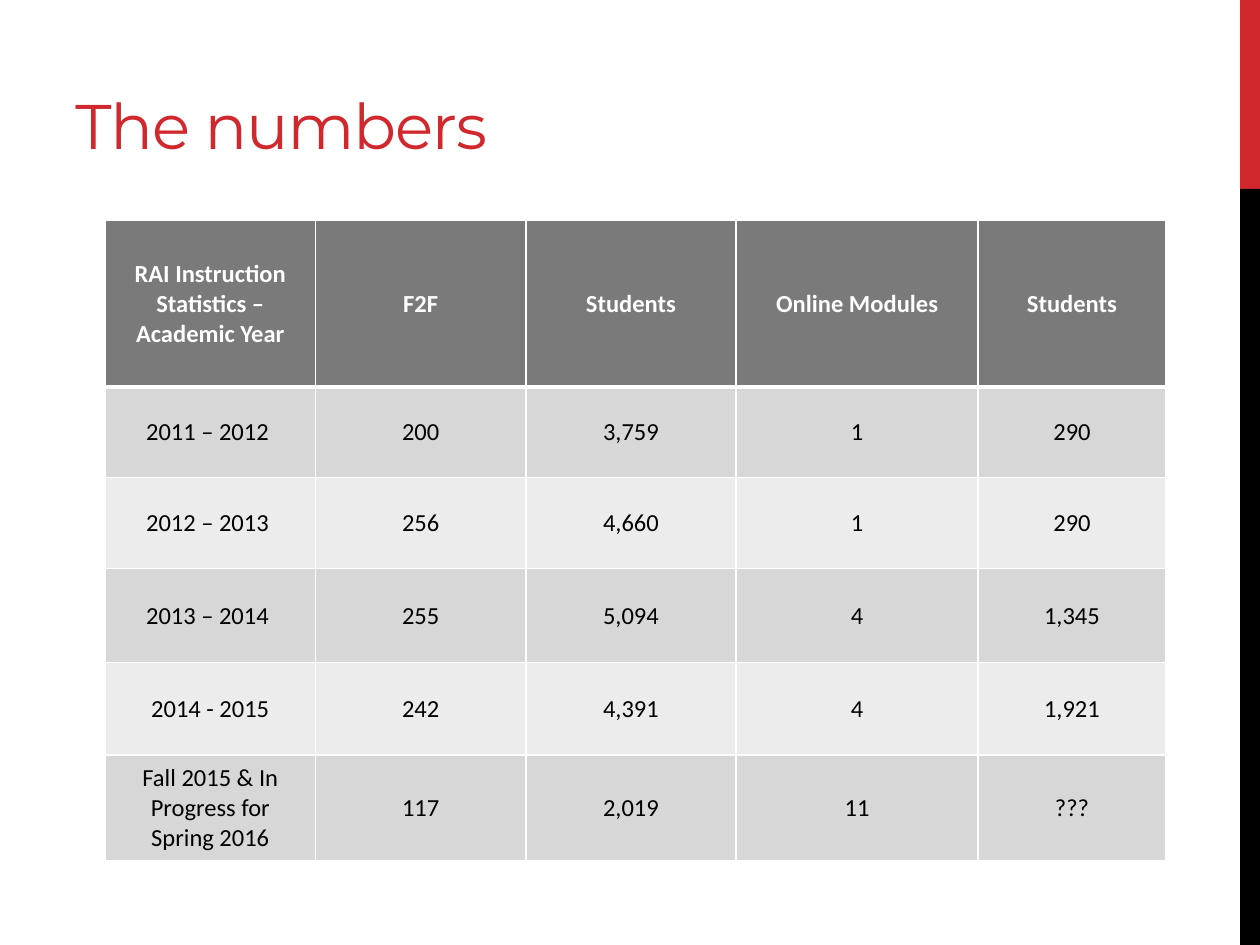
from dataclasses import dataclass

from lxml import etree
from pptx import Presentation
from pptx.dml.color import RGBColor
from pptx.enum.shapes import MSO_SHAPE
from pptx.enum.text import MSO_ANCHOR, PP_ALIGN
from pptx.oxml.ns import qn
from pptx.util import Cm, Pt

RECTANGLE = MSO_SHAPE.RECTANGLE
MIDDLE, BOTTOM = MSO_ANCHOR.MIDDLE, MSO_ANCHOR.BOTTOM
LEFT, CENTER = PP_ALIGN.LEFT, PP_ALIGN.CENTER


@dataclass(frozen=True)
class Theme:
    accent: str = "D1282E"
    black: str = "000000"
    white: str = "FFFFFF"
    header: str = "7A7A7A"
    bands: tuple = ("D7D7D7", "ECECEC")
    title_font: str = "Montserrat"
    body_font: str = "Calibri"
    title_size: float = 36
    body_size: float = 14
    title_spacing: float = -0.6
    border: float = 1
    header_border: float = 3


class SlideBuilder:
    def __init__(self, slide, theme):
        self.slide = slide
        self.theme = theme

    def bar(self, left, top, width, height, color):
        shape = self.slide.shapes.add_shape(
            RECTANGLE, Cm(left), Cm(top), Cm(width), Cm(height))
        shape.shadow.inherit = False
        shape.fill.solid()
        shape.fill.fore_color.rgb = RGBColor.from_string(color)
        shape.line.fill.background()

    def add_text(self, frame, text, font, size, color, bold=False, align=LEFT):
        paragraph = frame.paragraphs[0]
        paragraph.alignment = align
        run = paragraph.add_run()
        run.text = text
        run.font.name = font
        run.font.size = Pt(size)
        run.font.bold = bold
        run.font.color.rgb = RGBColor.from_string(color)
        return run

    def title(self, left, top, width, height, text):
        theme = self.theme
        box = self.slide.shapes.add_textbox(
            Cm(left), Cm(top), Cm(width), Cm(height))
        frame = box.text_frame
        frame.word_wrap = True
        frame.vertical_anchor = BOTTOM
        run = self.add_text(frame, text, theme.title_font, theme.title_size,
                            theme.accent)
        properties = run._r.get_or_add_rPr()
        properties.set("spc", str(round(theme.title_spacing * 100)))

    def borders(self, cell, top_width, bottom_width):
        """Outline a cell; call before filling, as the schema puts lines first."""
        properties = cell._tc.get_or_add_tcPr()
        side_width = self.theme.border
        widths = {"a:lnL": side_width, "a:lnR": side_width,
                  "a:lnT": top_width, "a:lnB": bottom_width}
        for tag, width in widths.items():
            line = etree.SubElement(properties, qn(tag), w=str(Pt(width)))
            fill = etree.SubElement(line, qn("a:solidFill"))
            etree.SubElement(fill, qn("a:srgbClr"), val=self.theme.white)

    def cell(self, cell, text, row_index):
        theme = self.theme
        is_header = row_index == 0
        fill = theme.header if is_header else theme.bands[(row_index - 1) % 2]
        color = theme.white if is_header else theme.black
        top_width = theme.header_border if row_index == 1 else theme.border
        bottom_width = theme.header_border if is_header else theme.border
        self.borders(cell, top_width, bottom_width)
        cell.fill.solid()
        cell.fill.fore_color.rgb = RGBColor.from_string(fill)
        cell.vertical_anchor = MIDDLE
        self.add_text(cell.text_frame, text, theme.body_font, theme.body_size,
                      color, is_header, CENTER)

    def table(self, left, top, column_widths, row_heights, rows):
        table = self.slide.shapes.add_table(
            len(rows), len(column_widths), Cm(left), Cm(top),
            Cm(sum(column_widths)), Cm(sum(row_heights))).table
        for column, width in zip(table.columns, column_widths):
            column.width = Cm(width)
        for index, (row, height) in enumerate(zip(table.rows, row_heights)):
            row.height = Cm(height)
            for cell, text in zip(row.cells, rows[index]):
                self.cell(cell, text, index)


STATISTICS = [
    ("RAI Instruction Statistics – Academic Year", "F2F", "Students",
     "Online Modules", "Students"),
    ("2011 – 2012 ", "200", "3,759", "1", "290"),
    ("2012 – 2013 ", "256", "4,660", "1", "290"),
    ("2013 – 2014 ", "255", "5,094", "4", "1,345"),
    ("2014 - 2015", "242", "4,391", "4", "1,921"),
    ("Fall 2015 & In Progress for Spring 2016", "117", "2,019", "11", "???"),
]
COLUMN_WIDTHS = [4.24, 4.24, 4.24, 4.88, 3.78]
ROW_HEIGHTS = [3.35, 1.83, 1.83, 1.9, 1.86, 2.13]


def main():
    presentation = Presentation()
    presentation.slide_width = Cm(25.4)
    presentation.slide_height = Cm(19.05)
    slide = presentation.slides.add_slide(presentation.slide_layouts[6])
    theme = Theme()
    builder = SlideBuilder(slide, theme)
    builder.bar(25, 0, 0.4, 3.81, theme.accent)
    builder.bar(25, 3.81, 0.4, 15.24, theme.black)
    builder.title(1.27, 0.43, 16.08, 2.97, "The numbers")
    builder.table(2.12, 4.45, COLUMN_WIDTHS, ROW_HEIGHTS, STATISTICS)
    presentation.save("out.pptx")


if __name__ == "__main__":
    main()
